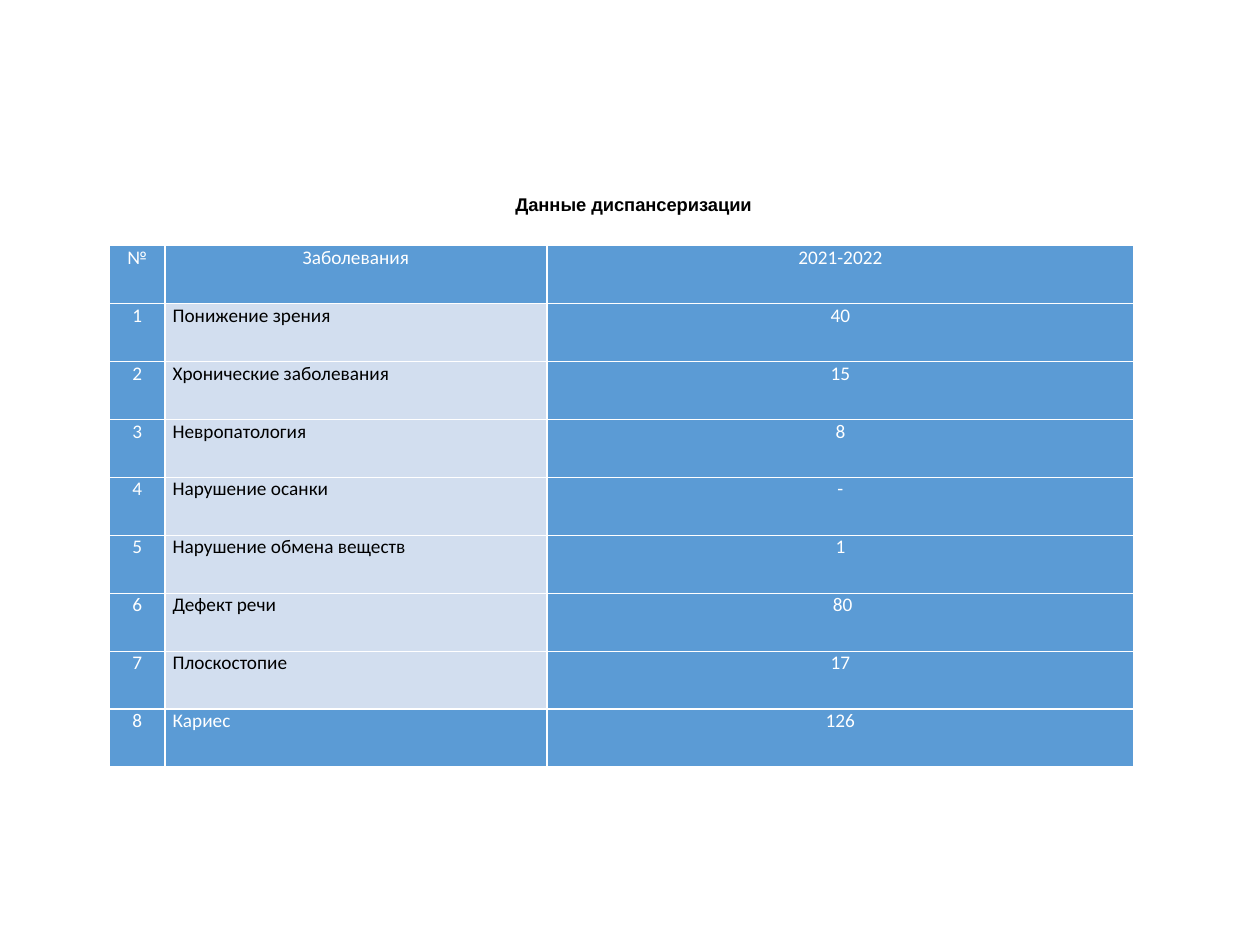
import pptx
import pptx.dml.color
import pptx.enum.text
import pptx.oxml
import pptx.oxml.ns
import pptx.util

TITLE = "Данные диспансеризации"
HEADER = ("№", "Заболевания", "2021-2022")
DISEASES = [
    ("Понижение зрения", "40"),
    ("Хронические заболевания", "15"),
    ("Невропатология", "8"),
    ("Нарушение осанки", "-"),
    ("Нарушение обмена веществ", "1"),
    ("Дефект речи", " 80"),
    ("Плоскостопие", "17"),
    ("Кариес", "126"),
]
COLUMN_WIDTHS = (0.44, 3.03, 4.66)
ROW_HEIGHT = 0.46
THEME = {
    "blue": "5B9BD5",
    "pale": "D2DEEF",
    "white": "FFFFFF",
    "black": "000000",
    "title_font": "Arial",
    "table_font": "Calibri",
    "title_size": 10.5,
    "table_size": 11,
    "border": 1,
}

Inches = pptx.util.Inches
Pt = pptx.util.Pt
ALIGN = pptx.enum.text.PP_ALIGN


def rgb(name):
    return pptx.dml.color.RGBColor.from_string(THEME[name])


def write_text(tf, text, role="table", color="white", bold=False, align=ALIGN.CENTER):
    p = tf.paragraphs[0]
    p.alignment = align
    r = p.add_run()
    r.text = text
    r.font.name = THEME[role + "_font"]
    r.font.size = Pt(THEME[role + "_size"])
    r.font.bold = bold
    r.font.color.rgb = rgb(color)


def set_borders(cell):
    tc_pr = cell._tc.get_or_add_tcPr()
    for side in ("lnL", "lnR", "lnT", "lnB"):
        tc_pr.append(pptx.oxml.parse_xml(
            f'<a:{side} {pptx.oxml.ns.nsdecls("a")} w="{Pt(THEME["border"])}">'
            f'<a:solidFill><a:srgbClr val="{THEME["white"]}"/></a:solidFill></a:{side}>'
        ))


def add_title(s):
    sp = s.shapes.title
    sp.left, sp.top = Inches(4.02), Inches(1.48)
    sp.width, sp.height = Inches(2.14), Inches(0.48)
    tf = sp.text_frame
    tf.word_wrap = True
    tf.auto_size = pptx.enum.text.MSO_AUTO_SIZE.NONE
    tf.vertical_anchor = pptx.enum.text.MSO_ANCHOR.TOP
    tf.margin_left = tf.margin_right = Inches(0.07)
    tf.margin_top = tf.margin_bottom = Inches(0.05)
    write_text(tf, TITLE, role="title", color="black", bold=True, align=ALIGN.LEFT)


def add_disease_table(s):
    rows = [HEADER] + [(str(n), *row) for n, row in enumerate(DISEASES, 1)]
    last = len(rows) - 1
    table = s.shapes.add_table(
        len(rows), len(HEADER), Inches(0.87), Inches(1.95),
        Inches(sum(COLUMN_WIDTHS)), Inches(ROW_HEIGHT * len(rows)),
    ).table
    table.first_row = table.horz_banding = False
    for column, width in zip(table.columns, COLUMN_WIDTHS):
        column.width = Inches(width)
    for i, row in enumerate(rows):
        table.rows[i].height = Inches(ROW_HEIGHT)
        for j, text in enumerate(row):
            cell = table.cell(i, j)
            cell.margin_left = cell.margin_right = Inches(0.06)
            cell.margin_top = cell.margin_bottom = 0
            set_borders(cell)
            is_name = j == 1 and i > 0
            is_pale = is_name and i < last
            cell.fill.solid()
            cell.fill.fore_color.rgb = rgb("pale" if is_pale else "blue")
            write_text(
                cell.text_frame, text,
                color="black" if is_pale else "white",
                align=ALIGN.JUSTIFY if is_name else ALIGN.CENTER,
            )


def main():
    prs = pptx.Presentation()
    prs.slide_width, prs.slide_height = Inches(10), Inches(7.5)
    s = prs.slides.add_slide(prs.slide_layouts[5])
    add_disease_table(s)
    add_title(s)
    prs.save("out.pptx")


if __name__ == "__main__":
    main()
